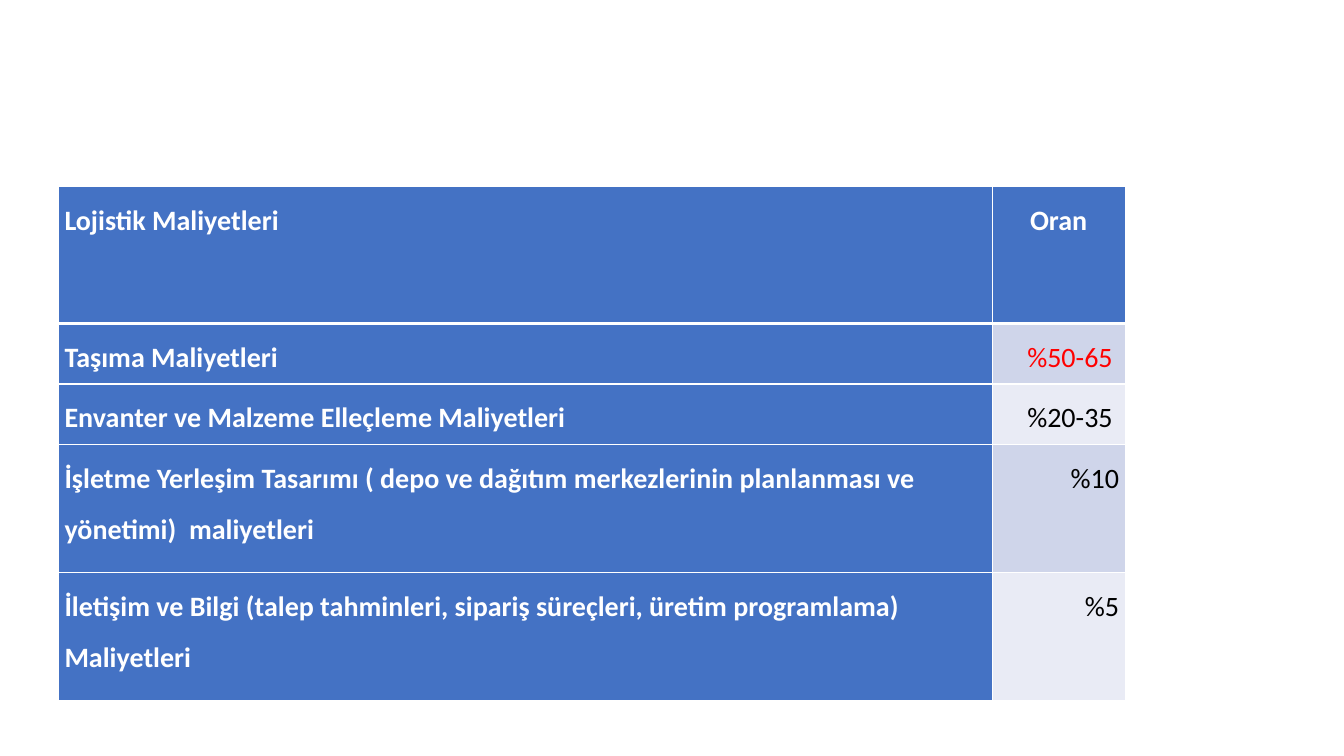
from lxml import etree
from pptx import Presentation
from pptx import util as u
from pptx.dml.color import RGBColor
from pptx.enum import text
from pptx.oxml.ns import qn

COLORS = {
    "blue": "4472C4",
    "band_dark": "CFD5EA",
    "band_light": "E9EBF5",
    "white": "FFFFFF",
    "black": "000000",
    "red": "FF0000",
}
HEADER = ("Lojistik Maliyetleri", "Oran")
COSTS = [
    ("Taşıma Maliyetleri", "%50-65 "),
    ("Envanter ve Malzeme Elleçleme Maliyetleri", "%20-35 "),
    ("İşletme Yerleşim Tasarımı ( depo ve dağıtım merkezlerinin planlanması ve "
     "yönetimi)  maliyetleri", "%10"),
    ("İletişim ve Bilgi (talep tahminleri, sipariş süreçleri, üretim programlama) "
     "Maliyetleri", "%5"),
]
COLUMN_WIDTHS = (9.26, 1.32)
ROW_HEIGHTS = (1.36, 0.6, 0.6, 1.27, 1.27)


def rgb(name):
    """Return the named colour."""
    return RGBColor.from_string(COLORS[name])


def set_borders(cell, top=1, bottom=1):
    """Draw white borders, with their widths in points, around a cell."""
    properties = cell._tc.get_or_add_tcPr()
    for side, width in (("L", 1), ("R", 1), ("T", top), ("B", bottom)):
        line = etree.SubElement(properties, qn(f"a:ln{side}"), w=str(u.Pt(width)))
        fill = etree.SubElement(line, qn("a:solidFill"))
        etree.SubElement(fill, qn("a:srgbClr"), val=COLORS["white"])


def fill_cell(cell, content, fill, color, bold, alignment):
    """Write one cell's text and give it its fill and font."""
    cell.margin_left = cell.margin_right = u.Inches(0.06)
    cell.margin_top = cell.margin_bottom = 0
    cell.fill.solid()
    cell.fill.fore_color.rgb = rgb(fill)
    cell.text = content
    paragraph = cell.text_frame.paragraphs[0]
    paragraph.alignment = alignment
    paragraph.line_spacing = 1.5
    paragraph.space_after = u.Pt(6)
    paragraph.font.name = "Calibri"
    paragraph.font.size = u.Pt(20)
    paragraph.font.bold = bold
    paragraph.font.color.rgb = rgb(color)


def add_cost_table(slide, left, top):
    """Add the table of logistics costs and their shares."""
    table = slide.shapes.add_table(
        len(ROW_HEIGHTS), len(COLUMN_WIDTHS), u.Inches(left), u.Inches(top),
        u.Inches(sum(COLUMN_WIDTHS)), u.Inches(sum(ROW_HEIGHTS))).table
    for column, width in zip(table.columns, COLUMN_WIDTHS):
        column.width = u.Inches(width)
    for row, height in zip(table.rows, ROW_HEIGHTS):
        row.height = u.Inches(height)
    align = text.PP_ALIGN
    for index, (label, share) in enumerate([HEADER, *COSTS]):
        label_cell, share_cell = table.cell(index, 0), table.cell(index, 1)
        for cell in (label_cell, share_cell):
            set_borders(cell, top=3 if index == 1 else 1, bottom=3 if index == 0 else 1)
        fill_cell(label_cell, label, "blue", "white", True, align.LEFT)
        if index == 0:
            fill_cell(share_cell, share, "blue", "white", True, align.CENTER)
        else:
            band = "band_dark" if index % 2 else "band_light"
            color = "red" if index == 1 else "black"
            fill_cell(share_cell, share, band, color, False, align.RIGHT)


def main():
    """Build and save the presentation."""
    presentation = Presentation()
    presentation.slide_width = u.Inches(13.33)
    presentation.slide_height = u.Inches(7.5)
    slide = presentation.slides.add_slide(presentation.slide_layouts[6])
    add_cost_table(slide, 0.58, 1.85)
    presentation.save("out.pptx")


if __name__ == "__main__":
    main()
